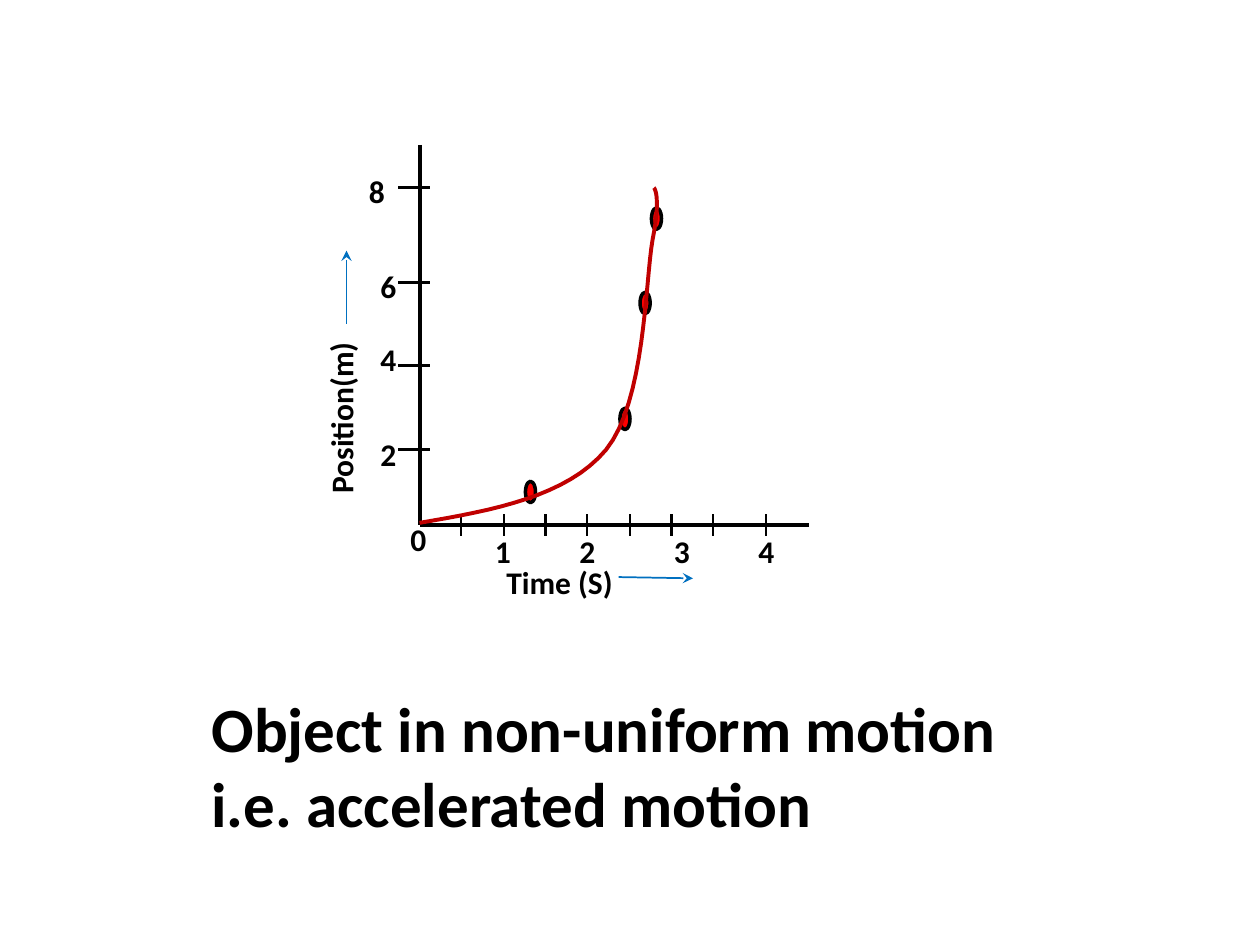
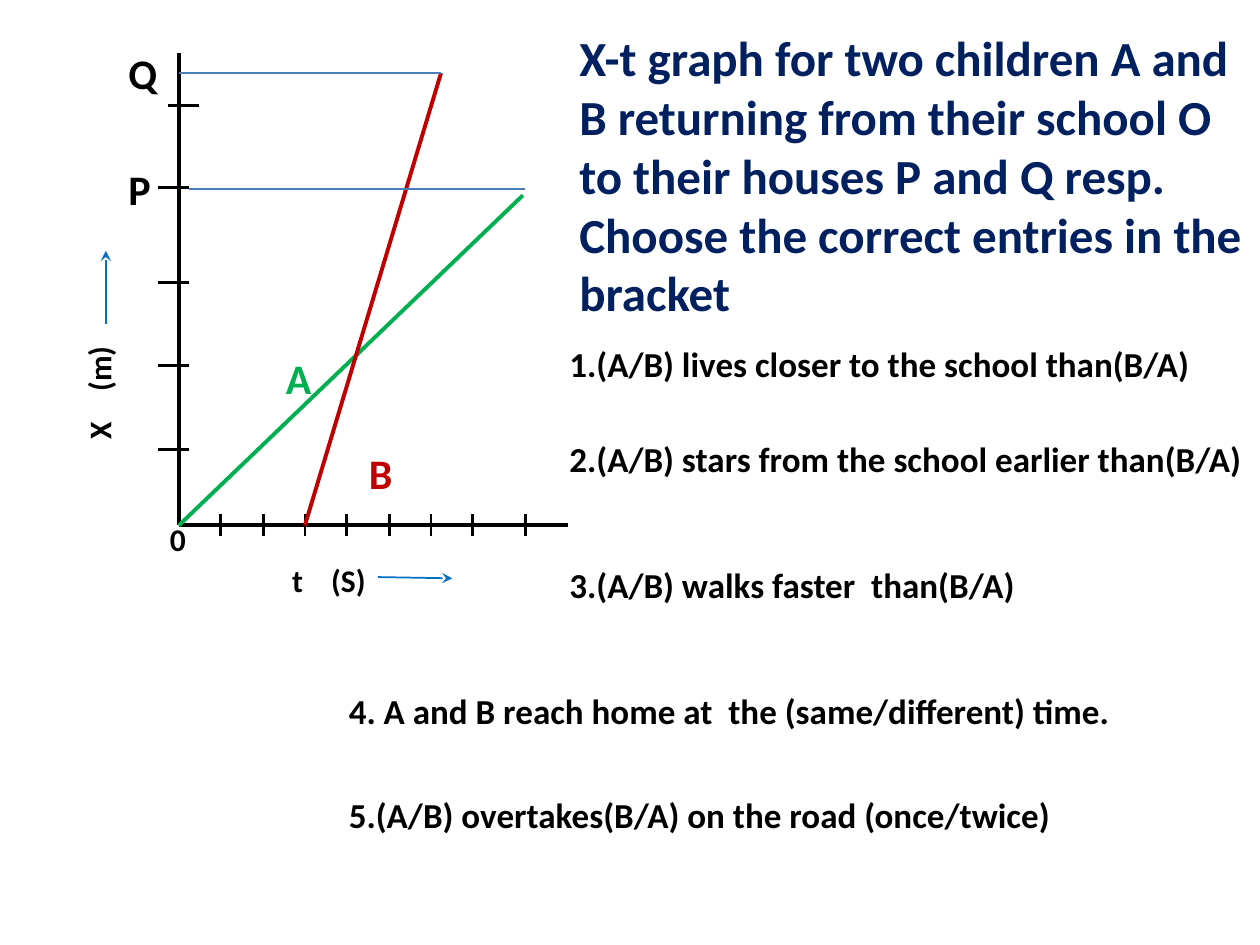
from lxml import etree
from pptx import Presentation
from pptx.dml.color import RGBColor
from pptx.enum.shapes import MSO_CONNECTOR, MSO_SHAPE
from pptx.oxml.ns import qn
from pptx.util import Pt

PX = 9144  # EMU per px, 100 px to the inch
FONT = "Calibri"
STRAIGHT = MSO_CONNECTOR.STRAIGHT
OVAL = MSO_SHAPE.OVAL

BLACK = RGBColor(0x00, 0x00, 0x00)
NAVY = RGBColor(0x00, 0x20, 0x60)
ARROW_BLUE = RGBColor(0x00, 0x70, 0xC0)
GUIDE_BLUE = RGBColor(0x4A, 0x7D, 0xBA)
GREEN = RGBColor(0x00, 0xB0, 0x50)
DARK_RED = RGBColor(0xC0, 0x00, 0x00)
RED = RGBColor(0xFF, 0x00, 0x00)

BASELINE = 417
TICK_HEIGHTS = [357, 290, 224, 149]
TICK_OFFSETS = [round(step * 100 / 3) for step in range(1, 8)] + [275]


def add_text(slide, text, left, top, width, height=40, size=18, color=BLACK, rotation=0):
    """Add a bold text box; each line of the text becomes a paragraph."""
    box = slide.shapes.add_textbox(left * PX, top * PX, width * PX, height * PX)
    box.rotation = rotation
    frame = box.text_frame
    frame.word_wrap = True
    frame.text = text
    for paragraph in frame.paragraphs:
        font = paragraph.font
        for run in paragraph.runs:
            font = run.font
            font.name = FONT
            font.size = Pt(size)
            font.bold = True
            font.color.rgb = color


def add_line(slide, x1, y1, x2, y2, color=BLACK, weight=1.5, arrow=False):
    line = slide.shapes.add_connector(STRAIGHT, x1 * PX, y1 * PX, x2 * PX, y2 * PX)
    line.line.color.rgb = color
    line.line.width = Pt(weight)
    properties = line.element.spPr
    if arrow:
        etree.SubElement(properties.find(qn("a:ln")), qn("a:tailEnd"), type="stealth")
    etree.SubElement(properties, qn("a:effectLst"))


presentation = Presentation()
presentation.slide_width = 1000 * PX
presentation.slide_height = 750 * PX
blank_layout = presentation.slide_layouts[6]
motion_slide = presentation.slides.add_slide(blank_layout)
children_slide = presentation.slides.add_slide(blank_layout)

# Axes, ticks and direction arrows shared by both graphs
for slide, origin, axis_top in [(motion_slide, 333, 115), (children_slide, 142, 42)]:
    add_line(slide, origin, axis_top, origin, BASELINE, weight=2.25)
    add_line(slide, origin + 309, BASELINE, origin, BASELINE, weight=2.25)
    for offset in TICK_OFFSETS:
        add_line(slide, origin + offset, 408, origin + offset, 425)
    for y in TICK_HEIGHTS:
        add_line(slide, origin + 8, y, origin - 17, y)
    add_text(slide, "0", origin - 17, 408, 33)
    add_line(slide, origin + 158, 458, origin + 217, 459, ARROW_BLUE, 1, arrow=True)
    add_line(slide, origin - 58, 257, origin - 58, 199, ARROW_BLUE, 1, arrow=True)

# Slide 1: non-uniform motion
add_text(motion_slide, "Time (S)", 392, 442, 125)
add_text(motion_slide, "Position(m)", 198, 309, 145, rotation=270)
for label, left in [("1", 383), ("2", 450), ("3", 525), ("4", 592)]:
    add_text(motion_slide, label, left, 417, 33)
for label, left, top in [("2", 292, 340), ("4", 292, 265), ("6", 292, 207), ("8", 283, 132)]:
    add_text(motion_slide, label, left, top, 33)

for left, top in [(417, 382), (492, 324), (517, 165), (508, 232)]:
    dot = motion_slide.shapes.add_shape(OVAL, left * PX, top * PX, 8 * PX, 17 * PX)
    dot.shadow.inherit = False
    dot.fill.solid()
    dot.fill.fore_color.rgb = RED
    dot.line.color.rgb = BLACK
    dot.line.width = Pt(2)

curve_segments = [
    [(333, 415), (392, 405), (450, 394), (481, 357)],
    [(481, 357), (512, 319), (512, 224), (518, 190)],
    [(518, 190), (525, 155), (519, 149), (519, 149)],
]
curve_points = []
for segment in curve_segments:
    for step in range(1, 17):
        t = step / 16
        weights = [(1 - t) ** 3, 3 * t * (1 - t) ** 2, 3 * t ** 2 * (1 - t), t ** 3]
        curve_points.append(tuple(
            round(PX * sum(weight * value for weight, value in zip(weights, values)))
            for values in zip(*segment)))
start_x, start_y = curve_segments[0][0]
builder = motion_slide.shapes.build_freeform(start_x * PX, start_y * PX)
builder.add_line_segments(curve_points, close=False)
curve = builder.convert_to_shape()
curve.shadow.inherit = False
curve.fill.background()
curve.line.color.rgb = DARK_RED
curve.line.width = Pt(2.25)

add_text(motion_slide, "Object in non-uniform motion\ni.e. accelerated motion",
         158, 542, 692, 131, size=36)

# Slide 2: two children walking home
add_text(children_slide, "t", 222, 440, 33)
add_text(children_slide, "(S)", 253, 440, 55)
add_text(children_slide, "X", 60, 320, 37, rotation=270)
add_text(children_slide, "(m)", 49, 271, 59, rotation=270)
add_line(children_slide, 158, 84, 133, 84)
add_line(children_slide, 415, 155, 142, 417, GREEN, 2.25)
add_line(children_slide, 350, 58, 242, 417, DARK_RED, 2.25)
add_line(children_slide, 417, 150, 150, 150, GUIDE_BLUE, 0.75)
add_line(children_slide, 350, 58, 142, 58, GUIDE_BLUE, 0.75)
for label, left, top, color in [
    ("Q", 92, 33, BLACK),
    ("P", 92, 125, BLACK),
    ("A", 217, 275, GREEN),
    ("B", 283, 350, DARK_RED),
]:
    add_text(children_slide, label, left, top, 43, 50, size=24, color=color)

add_text(children_slide,
         "X-t graph for two children A and B returning from their school O "
         "to their houses P and Q resp.\nChoose the correct entries in the bracket",
         450, 17, 550, 246, size=28, color=NAVY)
for question, left, top, width in [
    ("1.(A/B) lives closer to the school than(B/A)", 442, 267, 558),
    ("2.(A/B) stars from the school earlier than(B/A)", 442, 342, 558),
    ("3.(A/B) walks faster  than(B/A)", 442, 442, 558),
    ("4. A and B reach home at  the (same/different) time.", 267, 542, 683),
    ("5.(A/B) overtakes(B/A) on the road (once/twice)", 267, 625, 633),
]:
    add_text(children_slide, question, left, top, width, 44, size=20)

presentation.save("out.pptx")
